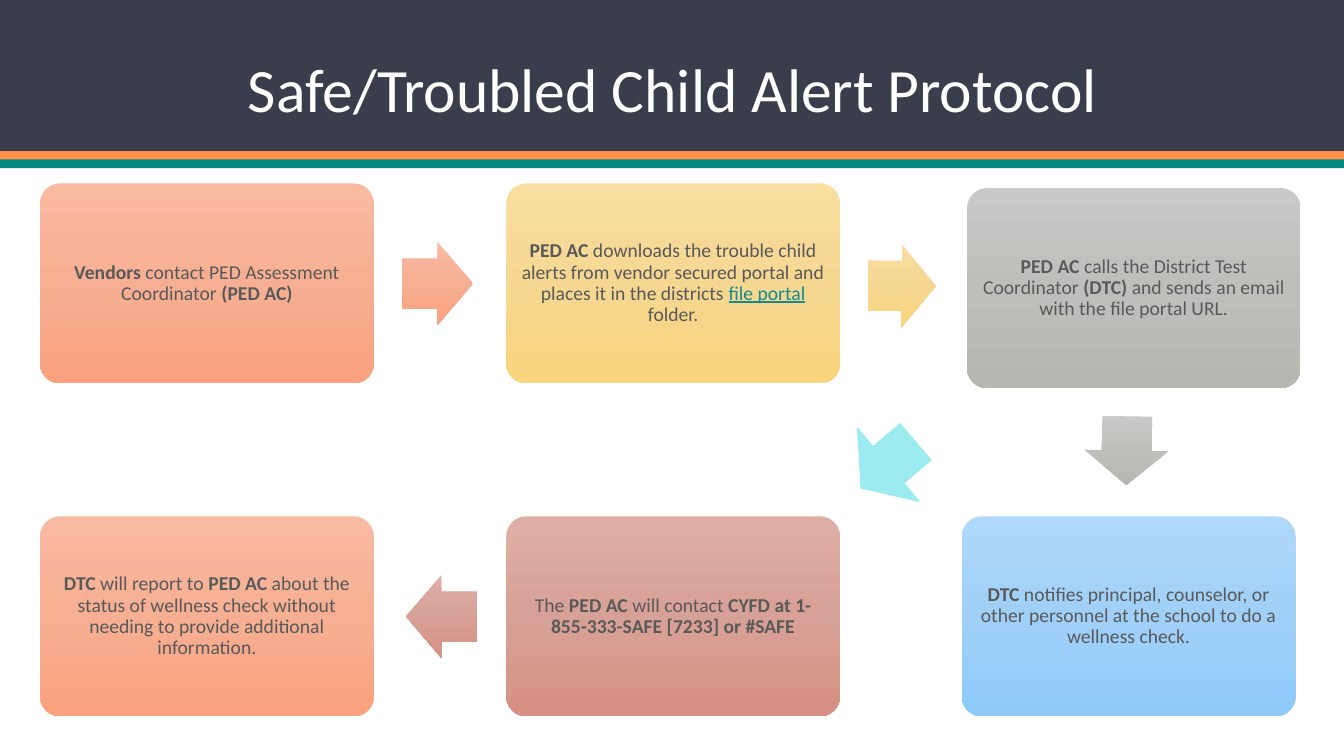
from copy import deepcopy

from pptx import Presentation
from pptx.dml.color import RGBColor
from pptx.enum.shapes import MSO_SHAPE as Preset
from pptx.enum.text import MSO_ANCHOR as Anchor, PP_ALIGN as Align
from pptx.oxml.ns import qn
from pptx.util import Cm, Pt

SLIDE_WIDTH, SLIDE_HEIGHT = 33.87, 19.05
TITLE = "Safe/Troubled Child Alert Protocol"
BANDS = [(0, 3.81, "3A3D4B"), (3.81, 0.22, "FF914D"), (4.02, 0.22, "048A81")]

ORANGE = ("F9BAA1", "F6AF93", "FAA27E")
YELLOW = ("F9DEA0", "F6D792", "FAD57D")
GREY = ("C8C9C6", "BEBFBB", "B5B7B1")
BLUE = ("AFD8FA", "A0D0F8", "8ECBFB")
RED = ("DEAEA5", "D8A197", "D79083")
CYAN = "9CEBF0"

PLAIN = {"size": Pt(14), "name": "Calibri", "color": "595959"}
BOLD = PLAIN | {"bold": True}
LINK = PLAIN | {"underline": True, "color": "168A90"}
HEADING = {"size": Pt(44), "name": "Calibri", "color": "FFFFFF"}

# left, top, gradient, runs
CARD_WIDTH, CARD_HEIGHT = 8.41, 5.04
LEFT, MIDDLE = 1.01, 12.76
TOP_ROW, BOTTOM_ROW = 4.62, 13.01
STEPS = [
    (LEFT, TOP_ROW, ORANGE, [
        ("Vendors", BOLD), (" contact PED Assessment Coordinator ", PLAIN),
        ("(PED AC)", BOLD)]),
    (MIDDLE, TOP_ROW, YELLOW, [
        ("PED AC", BOLD),
        (" downloads the trouble child alerts from vendor secured portal and "
         "places it in the districts ", PLAIN),
        ("file portal", LINK), (" folder.", PLAIN)]),
    (24.37, 4.74, GREY, [
        ("PED AC ", BOLD), ("calls the District Test Coordinator ", PLAIN),
        ("(DTC)", BOLD), (" and sends an email with the file portal URL.", PLAIN)]),
    (24.24, BOTTOM_ROW, BLUE, [
        ("DTC", BOLD),
        (" notifies principal, counselor, or other personnel at the school "
         "to do a wellness check.", PLAIN)]),
    (MIDDLE, BOTTOM_ROW, RED, [
        ("The ", PLAIN), ("PED AC ", BOLD), ("will contact ", PLAIN),
        ("CYFD at 1-855-333-SAFE [7233] or #SAFE", BOLD)]),
    (LEFT, BOTTOM_ROW, ORANGE, [
        ("DTC", BOLD), (" will report to ", PLAIN), ("PED AC", BOLD),
        (" about the status of wellness check without needing to provide "
         "additional information.", PLAIN)]),
]

# left, top, width, height, rotation, shaft share, colours
ARROW_HEIGHT = 2.09
ARROWS = [
    (10.13, 6.1, 1.79, ARROW_HEIGHT, 0, 0.6, ORANGE),
    (21.87, 6.16, 1.71, ARROW_HEIGHT, 0.6, 0.6, YELLOW),
    (27.53, 10.31, 1.73, ARROW_HEIGHT, 90.9, 0.6, GREY),
    (10.23, 14.49, 1.79, ARROW_HEIGHT, 180, 0.6, RED),
    (21.49, 10.52, 1.79, 2.39, 139.8, 0.5, CYAN),
]


def rgb(value):
    return RGBColor.from_string(value)


def paint(shape, colours):
    """Fill with one colour, or with a vertical gradient that stays upright."""
    fill = shape.fill
    if isinstance(colours, str):
        fill.solid()
        fill.fore_color.rgb = rgb(colours)
        return
    fill.gradient()
    fill.gradient_angle = 270
    gradient = shape._element.spPr.find(qn("a:gradFill"))
    gradient.set("rotWithShape", "0")
    stop_list = gradient.find(qn("a:gsLst"))
    stop_list.insert(1, deepcopy(stop_list[0]))
    for stop, position, colour in zip(fill.gradient_stops, (0, 0.5, 1), colours):
        stop.position = position
        stop.color.rgb = rgb(colour)


def add_preset(preset, left, top, width, height, colours):
    shape = slide.shapes.add_shape(preset, Cm(left), Cm(top), Cm(width), Cm(height))
    shape.shadow.inherit = False
    shape.line.fill.background()
    paint(shape, colours)
    return shape


def write(shape, runs, inset):
    frame = shape.text_frame
    layout = {"word_wrap": True, "vertical_anchor": Anchor.MIDDLE}
    layout |= {f"margin_{side}": Cm(inset) for side in ("left", "right", "top", "bottom")}
    for attribute, value in layout.items():
        setattr(frame, attribute, value)
    paragraph = frame.paragraphs[0]
    paragraph.alignment = Align.CENTER
    paragraph.line_spacing = 0.9
    for text, style in runs:
        run = paragraph.add_run()
        run.text = text
        for attribute, value in style.items():
            if attribute == "color":
                run.font.color.rgb = rgb(value)
            else:
                setattr(run.font, attribute, value)


deck = Presentation()
deck.slide_width, deck.slide_height = Cm(SLIDE_WIDTH), Cm(SLIDE_HEIGHT)
slide = deck.slides.add_slide(deck.slide_layouts[6])

for top, height, colour in BANDS:
    add_preset(Preset.RECTANGLE, 0, top, SLIDE_WIDTH, height, colour)

heading = slide.shapes.add_textbox(Cm(3.63), Cm(1.27), Cm(26.67), Cm(2.13))
write(heading, [(TITLE, HEADING)], 0.13)

for left, top, gradient, runs in STEPS:
    card = add_preset(Preset.ROUNDED_RECTANGLE, left, top, CARD_WIDTH, CARD_HEIGHT, gradient)
    card.adjustments[0] = 0.1
    write(card, runs, 0.15)

for left, top, width, height, rotation, shaft, colours in ARROWS:
    arrow = add_preset(Preset.RIGHT_ARROW, left, top, width, height, colours)
    arrow.rotation = rotation
    arrow.adjustments[0] = shaft
    if colours == CYAN:
        arrow.line.color.rgb = rgb(CYAN)
        arrow.line.width = Pt(1)

deck.save("out.pptx")
